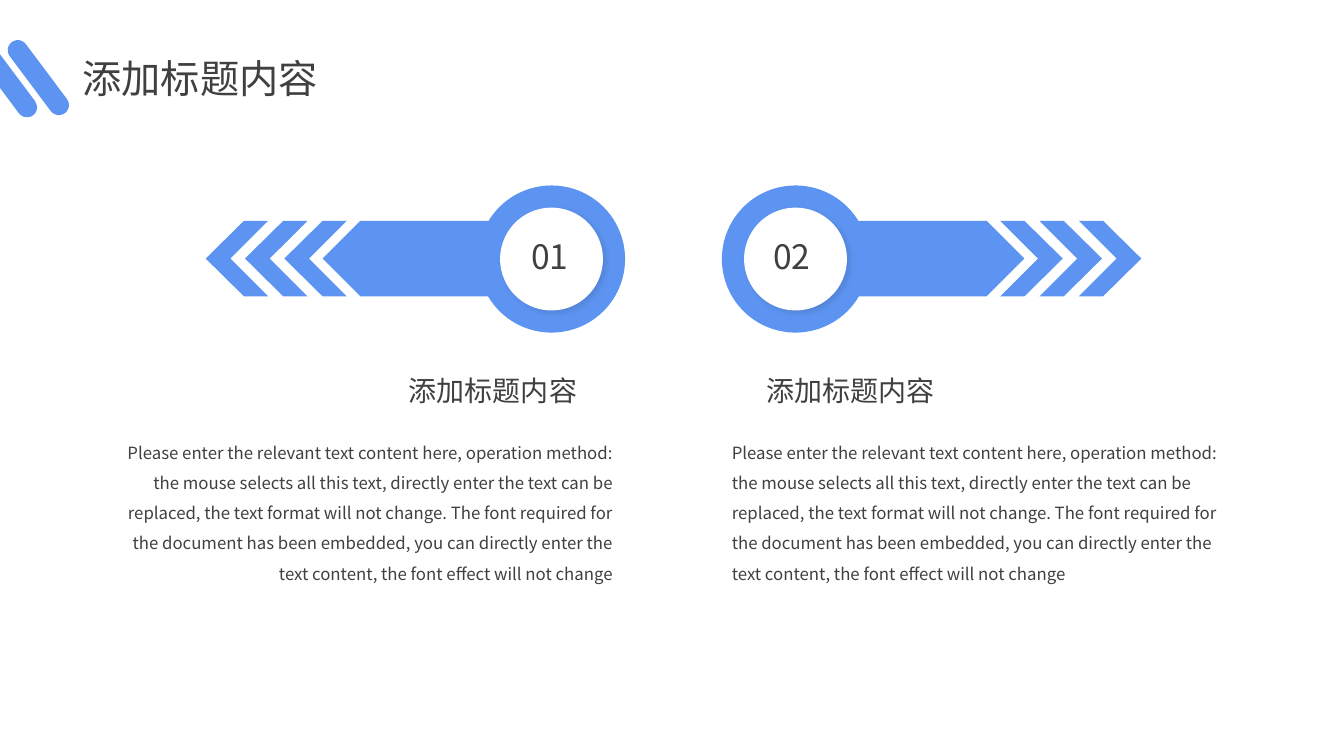
from lxml import etree
from pptx import Presentation
from pptx.dml.color import RGBColor
from pptx.enum.shapes import MSO_SHAPE
from pptx.enum.text import MSO_AUTO_SIZE, PP_ALIGN
from pptx.oxml import parse_xml
from pptx.oxml.ns import qn
from pptx.util import Inches, Pt

PILL = MSO_SHAPE.ROUNDED_RECTANGLE
PLATE = MSO_SHAPE.PENTAGON
OVAL = MSO_SHAPE.OVAL
GROW = MSO_AUTO_SIZE.SHAPE_TO_FIT_TEXT
LEFT, CENTER, RIGHT = PP_ALIGN.LEFT, PP_ALIGN.CENTER, PP_ALIGN.RIGHT

FONT = "Noto Sans CJK SC"
BLUE, WHITE, DARK = "5D94F1", "FFFFFF", "404040"
MIRROR_WIDTH = 13.36
ARROW_TOP, ARROW_HEIGHT = 2.19, 0.75
CHEVRON = [(0, 0), (0.24, 0), (0.62, 0.375), (0.24, 0.75), (0, 0.75), (0.375, 0.375)]
HEADING = "添加标题内容"
BODY = (
    "Please enter the relevant text content here, operation method: "
    "the mouse selects all this text, directly enter the text can be "
    "replaced, the text format will not change. The font required for "
    "the document has been embedded, you can directly enter the "
    "text content, the font effect will not change"
)
SHADOW = (
    '<a:effectLst xmlns:a="http://schemas.openxmlformats.org/drawingml/2006/main">'
    '<a:outerShdw blurRad="50800" dist="38100" dir="2700000" algn="tl" rotWithShape="0">'
    '<a:srgbClr val="000000"><a:alpha val="10000"/></a:srgbClr>'
    "</a:outerShdw></a:effectLst>"
)


def rgb(value):
    return RGBColor.from_string(value)


class Deck:
    """Draws styled elements on the current slide."""

    def __init__(self, prs):
        self.slide = prs.slides.add_slide(prs.slide_layouts[6])

    def paint(self, sp, fill):
        sp.shadow.inherit = False
        sp.fill.solid()
        sp.fill.fore_color.rgb = rgb(fill)
        sp.line.fill.background()
        return sp

    def shape(self, kind, x, y, w, h, fill=BLUE, rotation=0):
        sp = self.slide.shapes.add_shape(kind, Inches(x), Inches(y), Inches(w), Inches(h))
        sp.rotation = rotation
        return self.paint(sp, fill)

    def polygon(self, points, fill=BLUE):
        pts = [(Inches(x), Inches(y)) for x, y in points]
        builder = self.slide.shapes.build_freeform(*pts[0])
        builder.add_line_segments(pts[1:], close=True)
        return self.paint(builder.convert_to_shape(), fill)

    def disc(self, x, y, size):
        sp = self.shape(OVAL, x, y, size, size, WHITE)
        props = sp._element.spPr
        props.replace(props.find(qn("a:effectLst")), parse_xml(SHADOW))

    def text(self, text, x, y, w, h, size=12, align=CENTER, spacing=None, wrap=True):
        sp = self.slide.shapes.add_textbox(Inches(x), Inches(y), Inches(w), Inches(h))
        tf = sp.text_frame
        tf.word_wrap = wrap
        tf.auto_size = GROW
        p = tf.paragraphs[0]
        p.alignment = align
        p.line_spacing = spacing
        r = p.add_run()
        r.text = text
        r.font.size = Pt(size)
        r.font.name = FONT
        r.font.color.rgb = rgb(DARK)
        etree.SubElement(r.font._element, qn("a:ea"), typeface=FONT)

    def arrow(self, flipped):
        def place(x, w):
            return MIRROR_WIDTH - x - w if flipped else x

        self.shape(PLATE, place(8.19, 1.97), ARROW_TOP, 1.97, ARROW_HEIGHT,
                   rotation=180 if flipped else 0)
        self.shape(OVAL, place(7.16, 1.46), 1.84, 1.46, 1.46)
        self.disc(place(7.38, 1.02), 2.06, 1.02)
        for i in range(3):
            start = 9.92 + 0.39 * i
            self.polygon([(place(start + dx, 0), ARROW_TOP + dy) for dx, dy in CHEVRON])


def main():
    prs = Presentation()
    prs.slide_width, prs.slide_height = Inches(13.33), Inches(7.5)
    deck = Deck(prs)

    deck.text(HEADING, 0.72, 0.49, 2.53, 0.57, size=28, wrap=False)
    for x, y, w in [(-0.4, 0.68, 0.91), (-0.06, 0.67, 0.88)]:
        deck.shape(PILL, x, y, w, 0.2, rotation=53.2).adjustments[0] = 0.5

    columns = [
        ("01", True, 5.11, 3.61, 1.01, RIGHT),
        ("02", False, 7.51, 7.16, 7.16, LEFT),
    ]
    for number, flipped, number_x, heading_x, body_x, align in columns:
        deck.arrow(flipped)
        deck.text(number, number_x, 2.29, 0.69, 0.5, size=24)
        deck.text(HEADING, heading_x, 3.66, 2.56, 0.44, size=20)
        deck.text(BODY, body_x, 4.24, 5.17, 1.61, align=align, spacing=1.5)

    prs.save("out.pptx")


if __name__ == "__main__":
    main()
